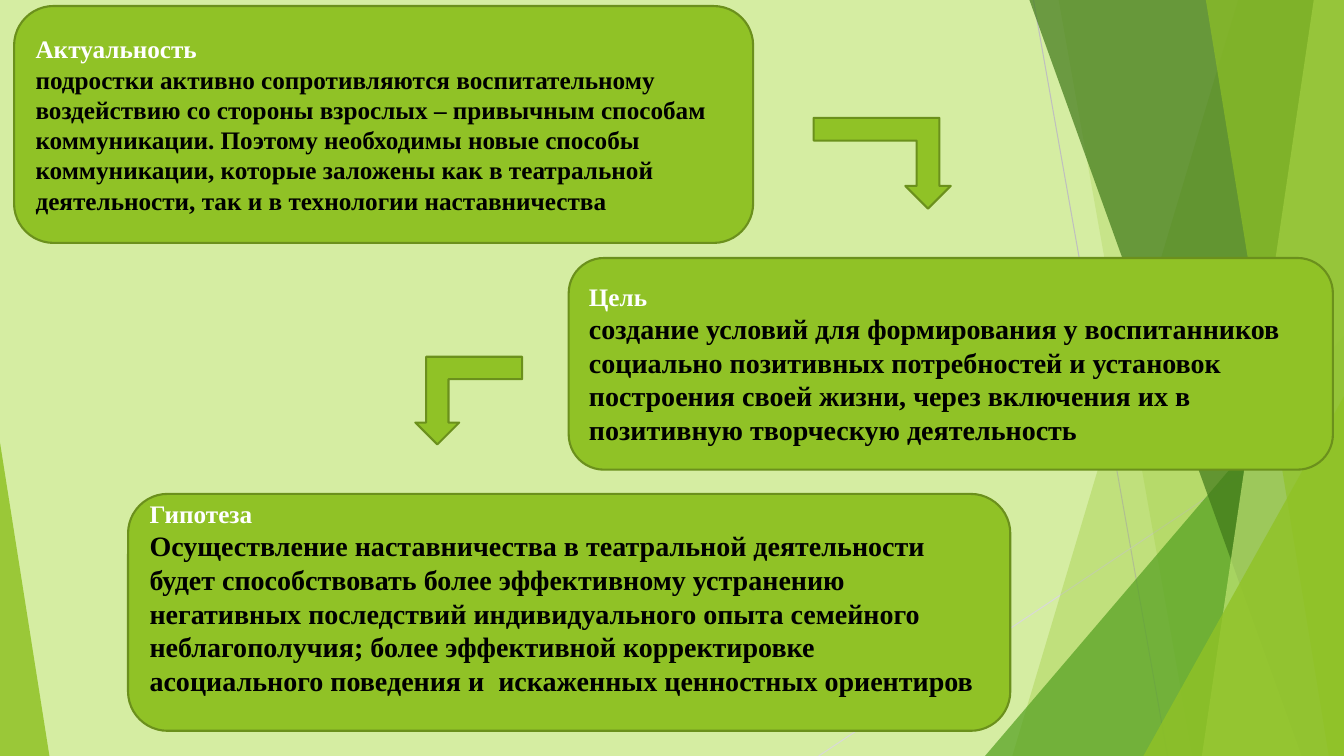
from dataclasses import dataclass

from lxml.etree import SubElement
from pptx import Presentation
from pptx.dml.color import RGBColor
from pptx.enum.shapes import MSO_CONNECTOR, MSO_SHAPE
from pptx.enum.text import MSO_ANCHOR, PP_ALIGN
from pptx.oxml.ns import qn
from pptx.shapes.autoshape import Shape
from pptx.slide import Slide
from pptx.util import Inches, Pt

WIDTH, HEIGHT = 13.33, 7.5


@dataclass(frozen=True)
class Theme:
    font: str = "Times New Roman"
    background: str = "D5EDA2"
    green: str = "90C226"
    outline: str = "6B901C"
    heading: str = "FFFFFF"
    body: str = "000000"
    heading_size: int = 18
    mid_green: str = "54A021"
    dark_green: str = "3F7819"
    pale_green: str = "C0E474"
    grey: str = "BFBFBF"
    light_grey: str = "D9D9D9"
    outline_width: float = 1.5
    hairline: float = 0.75


THEME = Theme()


@dataclass(frozen=True)
class Box:
    left: float
    top: float
    width: float
    height: float


@dataclass(frozen=True)
class Hairline:
    start: tuple[float, float]
    end: tuple[float, float]
    color: str


@dataclass(frozen=True)
class Facet:
    top_left: float
    bottom_left: float
    color: str
    opacity: int


@dataclass(frozen=True)
class Wedge:
    box: Box
    apex: float
    color: str
    opacity: int


@dataclass(frozen=True)
class Card:
    box: Box
    heading: str
    body: str
    body_size: int
    bottom_inset: float = 0.05


@dataclass(frozen=True)
class BentArrow:
    box: Box
    flip_horizontal: bool
    thickness: float


HAIRLINES = (
    Hairline((10.25, 0), (11.58, HEIGHT), THEME.grey),
    Hairline((WIDTH, 4.03), (8.12, HEIGHT), THEME.light_grey),
)

DECOR = (
    Facet(12.28, 10.04, THEME.green, 30),
    Facet(10.5, 11.83, THEME.green, 20),
    Wedge(Box(9.77, 3.33, 3.56, 4.17), 1, THEME.mid_green, 72),
    Facet(10.21, 12.91, THEME.dark_green, 70),
    Facet(13.03, 11.92, THEME.pale_green, 70),
    Facet(11.96, 13.18, THEME.green, 65),
    Wedge(Box(11.34, 3.93, 1.99, 3.57), 1, THEME.green, 80),
    Wedge(Box(0, 4.39, 0.49, 3.11), 0, THEME.green, 85),
)

CARDS = (
    Card(
        Box(0.14, 0.06, 7.33, 2.35),
        "Актуальность",
        "подростки активно сопротивляются воспитательному воздействию со стороны "
        "взрослых – привычным способам коммуникации. Поэтому необходимы новые способы "
        "коммуникации, которые заложены как в театральной деятельности, так и в "
        "технологии наставничества",
        18,
    ),
    Card(
        Box(5.64, 2.56, 7.58, 2.1),
        "Цель",
        "создание условий для формирования у воспитанников социально позитивных "
        "потребностей и установок построения своей жизни, через включения их в "
        "позитивную творческую деятельность",
        20,
    ),
    Card(
        Box(1.27, 4.9, 8.75, 2.35),
        "Гипотеза",
        "Осуществление наставничества в театральной деятельности будет способствовать "
        "более эффективному устранению негативных последствий индивидуального опыта "
        "семейного неблагополучия; более эффективной корректировке асоциального "
        "поведения и  искаженных ценностных ориентиров",
        20,
        0.34,
    ),
)

ARROWS = (
    BentArrow(Box(4.12, 3.54, 1.06, 0.87), True, 0.255),
    BentArrow(Box(8.07, 1.17, 1.36, 0.9), False, 0.25),
)


def color(value: str) -> RGBColor:
    return RGBColor.from_string(value)


def add_preset(slide: Slide, kind: MSO_SHAPE, box: Box) -> Shape:
    shape = slide.shapes.add_shape(
        kind, Inches(box.left), Inches(box.top), Inches(box.width), Inches(box.height)
    )
    shape.shadow.inherit = False
    return shape


def style_solid(shape: Shape) -> None:
    shape.fill.solid()
    shape.fill.fore_color.rgb = color(THEME.green)
    shape.line.color.rgb = color(THEME.outline)
    shape.line.width = Pt(THEME.outline_width)


def style_translucent(shape: Shape, fill: str, opacity: int) -> None:
    shape.shadow.inherit = False
    shape.fill.solid()
    shape.fill.fore_color.rgb = color(fill)
    shape.line.fill.background()
    fill_color = shape.element.spPr.find(qn("a:solidFill"))[0]
    SubElement(fill_color, qn("a:alpha")).set("val", str(opacity * 1000))


def add_hairline(slide: Slide, hairline: Hairline) -> None:
    connector = slide.shapes.add_connector(
        MSO_CONNECTOR.STRAIGHT, *map(Inches, hairline.start + hairline.end)
    )
    connector.line.color.rgb = color(hairline.color)
    connector.line.width = Pt(THEME.hairline)
    SubElement(connector.element.spPr, qn("a:effectLst"))


def add_facet(slide: Slide, facet: Facet) -> None:
    corners = ((WIDTH, 0), (WIDTH, HEIGHT), (facet.bottom_left, HEIGHT))
    builder = slide.shapes.build_freeform(Inches(facet.top_left), 0)
    builder.add_line_segments([(Inches(x), Inches(y)) for x, y in corners], close=True)
    style_translucent(builder.convert_to_shape(), facet.color, facet.opacity)


def add_wedge(slide: Slide, wedge: Wedge) -> None:
    shape = add_preset(slide, MSO_SHAPE.ISOSCELES_TRIANGLE, wedge.box)
    shape.adjustments[0] = wedge.apex
    style_translucent(shape, wedge.color, wedge.opacity)


def add_card(slide: Slide, card: Card) -> None:
    shape = add_preset(slide, MSO_SHAPE.ROUNDED_RECTANGLE, card.box)
    style_solid(shape)
    text_frame = shape.text_frame
    text_frame.text = f"{card.heading}\n{card.body}"
    text_frame.word_wrap = True
    text_frame.vertical_anchor = MSO_ANCHOR.MIDDLE
    text_frame.margin_bottom = Inches(card.bottom_inset)
    styles = ((THEME.heading_size, THEME.heading), (card.body_size, THEME.body))
    for paragraph, (size, text_color) in zip(text_frame.paragraphs, styles):
        paragraph.alignment = PP_ALIGN.LEFT
        font = paragraph.runs[0].font
        font.name = THEME.font
        font.size = Pt(size)
        font.bold = True
        font.color.rgb = color(text_color)


def add_bent_arrow(slide: Slide, arrow: BentArrow) -> None:
    shape = add_preset(slide, MSO_SHAPE.BENT_UP_ARROW, arrow.box)
    style_solid(shape)
    shape.adjustments[0] = arrow.thickness
    transform = shape.element.spPr.find(qn("a:xfrm"))
    transform.set("flipV", "1")
    if arrow.flip_horizontal:
        transform.set("flipH", "1")


def main() -> None:
    presentation = Presentation()
    presentation.slide_width = Inches(WIDTH)
    presentation.slide_height = Inches(HEIGHT)
    slide = presentation.slides.add_slide(presentation.slide_layouts[6])
    slide.background.fill.solid()
    slide.background.fill.fore_color.rgb = color(THEME.background)
    for hairline in HAIRLINES:
        add_hairline(slide, hairline)
    for piece in DECOR:
        if isinstance(piece, Facet):
            add_facet(slide, piece)
        else:
            add_wedge(slide, piece)
    for card in CARDS:
        add_card(slide, card)
    for arrow in ARROWS:
        add_bent_arrow(slide, arrow)
    presentation.save("out.pptx")


if __name__ == "__main__":
    main()
